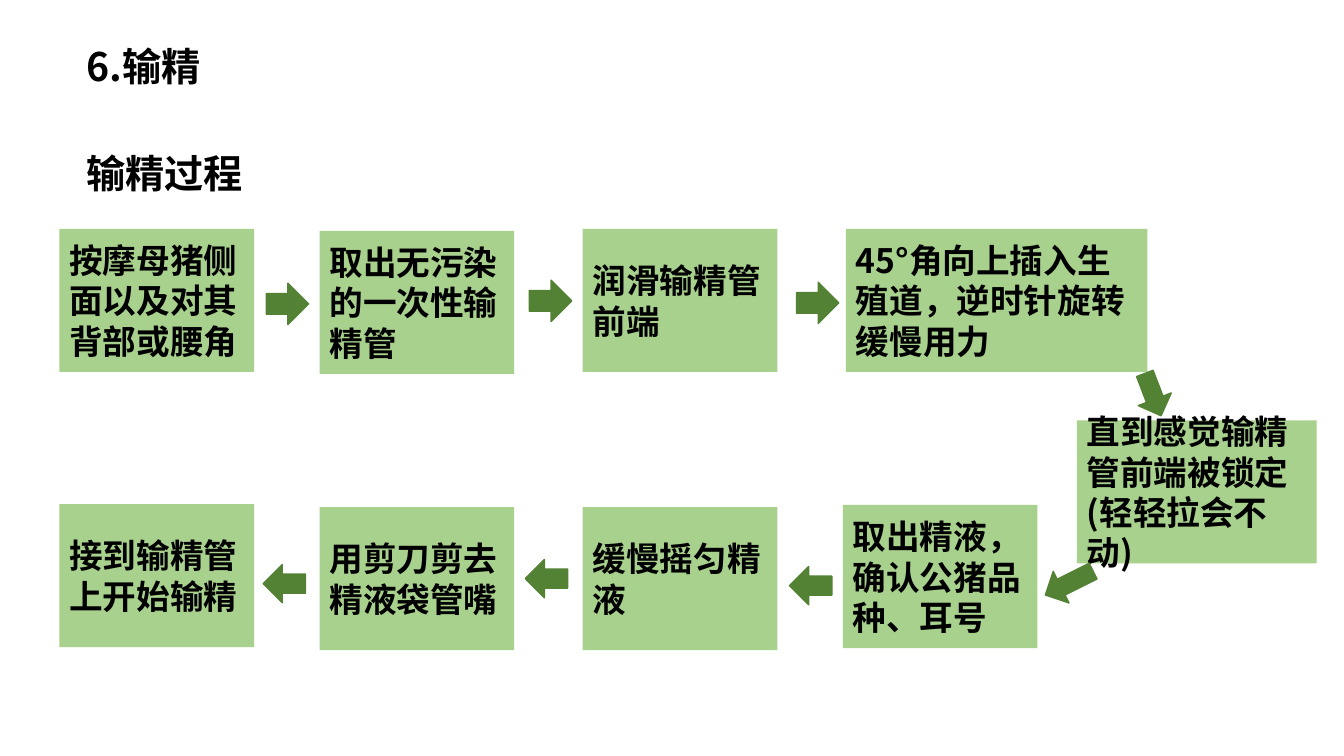
from lxml.etree import SubElement
from pptx import Presentation
from pptx.dml.color import RGBColor
from pptx.enum.shapes import MSO_SHAPE
from pptx.enum.text import MSO_ANCHOR, PP_ALIGN
from pptx.oxml.ns import qn
from pptx.util import Inches, Pt

FONT = "Noto Sans CJK SC"
RIGHT, LEFT = MSO_SHAPE.RIGHT_ARROW, MSO_SHAPE.LEFT_ARROW
BOX_W, BOX_H = 1.93, 1.42

# Steps: text, left, top, width
STEPS = [
    ("按摩母猪侧面以及对其背部或腰角", 0.59, 2.27, BOX_W),
    ("取出无污染的一次性输精管", 3.17, 2.29, BOX_W),
    ("润滑输精管前端", 5.78, 2.27, BOX_W),
    ("45°角向上插入生殖道，逆时针旋转缓慢用力", 8.39, 2.27, 2.99),
    ("直到感觉输精管前端被锁定(轻轻拉会不动)", 10.68, 4.17, 2.38),
    ("取出精液，确认公猪品种、耳号", 8.36, 5.01, BOX_W),
    ("缓慢摇匀精液", 5.78, 5.03, BOX_W),
    ("用剪刀剪去精液袋管嘴", 3.17, 5.03, BOX_W),
    ("接到输精管上开始输精", 0.59, 5, BOX_W),
]

# Arrows: kind, left, top, width, height, turn
ARROWS = [
    (RIGHT, 2.64, 2.81, 0.42, 0.41, 0),
    (RIGHT, 5.25, 2.78, 0.42, 0.41, 0),
    (RIGHT, 7.9, 2.8, 0.42, 0.41, 0),
    (RIGHT, 11.21, 3.74, 0.45, 0.35, 69),
    (LEFT, 10.34, 5.61, 0.53, 0.35, 333.5),
    (LEFT, 7.83, 5.62, 0.42, 0.38, 0),
    (LEFT, 5.21, 5.55, 0.42, 0.38, 0),
    (LEFT, 2.61, 5.6, 0.42, 0.38, 0),
]


def color(code):
    return RGBColor.from_string(code)


def write(frame, text, size):
    para = frame.paragraphs[0]
    para.text = text
    para.alignment = PP_ALIGN.LEFT
    font = para.font
    font.name, font.size, font.bold = FONT, Pt(size), True
    font.color.rgb = color("000000")
    # East Asian typeface
    props = para._p.pPr.find(qn("a:defRPr"))
    SubElement(props, qn("a:ea")).set("typeface", FONT)
    return para


def add_head(slide, text, left, top, width, height, wrap):
    frame = slide.shapes.add_textbox(
        Inches(left), Inches(top), Inches(width), Inches(height)).text_frame
    frame.word_wrap = wrap
    frame.vertical_anchor = MSO_ANCHOR.MIDDLE
    return write(frame, text, 28)


def add_form(slide, kind, left, top, width, height, fill):
    form = slide.shapes.add_shape(
        kind, Inches(left), Inches(top), Inches(width), Inches(height))
    form.shadow.inherit = False
    form.fill.solid()
    form.fill.fore_color.rgb = color(fill)
    return form


def add_step(slide, text, left, top, width):
    box = add_form(slide, MSO_SHAPE.RECTANGLE, left, top, width, BOX_H, "A9D18E")
    box.line.fill.background()
    box.text_frame.word_wrap = True
    box.text_frame.vertical_anchor = MSO_ANCHOR.MIDDLE
    write(box.text_frame, text, 24)


def add_arrow(slide, kind, left, top, width, height, turn):
    arrow = add_form(slide, kind, left, top, width, height, "548235")
    arrow.line.color.rgb = color("548235")
    arrow.line.width = Pt(1)
    arrow.rotation = turn


def main():
    deck = Presentation()
    deck.slide_width, deck.slide_height = Inches(13.33), Inches(7.5)
    slide = deck.slides.add_slide(deck.slide_layouts[6])

    # Headings
    title = add_head(slide, "6.输精", 0.76, 0.39, 3, 0.58, True)
    title.line_spacing = 0.9
    add_head(slide, "输精过程", 0.76, 1.43, 1.77, 0.57, False)

    # Process flow
    for step in STEPS:
        add_step(slide, *step)
    for arrow in ARROWS:
        add_arrow(slide, *arrow)

    deck.save("out.pptx")


if __name__ == "__main__":
    main()
